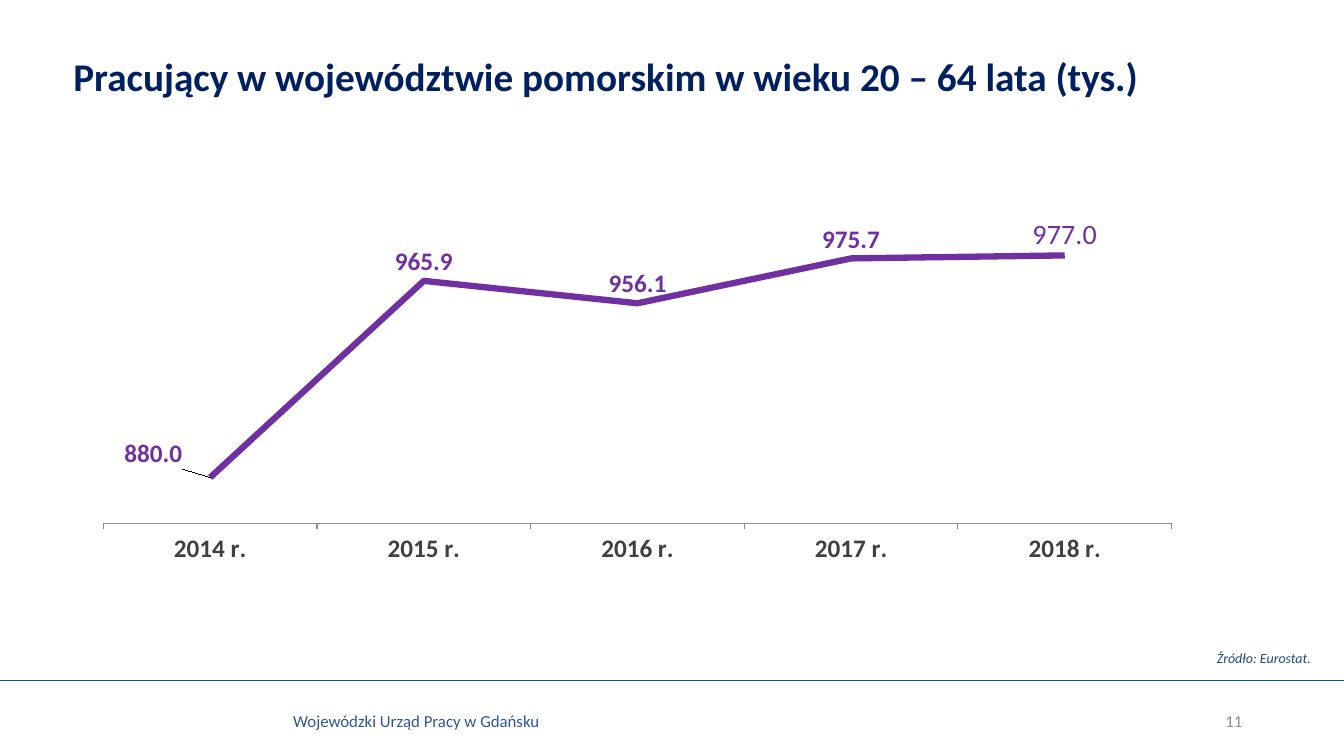
from dataclasses import dataclass

from lxml.etree import SubElement
from pptx import Presentation
from pptx.chart.data import CategoryChartData
from pptx.dml.color import RGBColor
from pptx.enum.chart import XL_CHART_TYPE, XL_LABEL_POSITION, XL_LEGEND_POSITION, XL_MARKER_STYLE, XL_TICK_MARK
from pptx.enum.shapes import MSO_CONNECTOR
from pptx.enum.text import MSO_ANCHOR, PP_ALIGN
from pptx.oxml import parse_xml
from pptx.oxml.ns import nsdecls, qn
from pptx.util import Inches, Pt


@dataclass(frozen=True)
class Theme:
    font: str = "Calibri"
    title: str = "002060"
    series: str = "7030A0"
    axis_text: str = "404040"
    axis_line: str = "8C8C8C"
    rule: str = "065B8A"
    footer: str = "2F5597"
    number: str = "8C8C8C"
    source: str = "1E4B7D"
    title_size: int = 28
    last_label_size: int = 20
    chart_size: int = 18
    footer_size: int = 12
    source_size: int = 10


THEME = Theme()
YEARS = ["2014 r.", "2015 r.", "2016 r.", "2017 r.", "2018 r."]
EMPLOYED = [880.0, 965.9, 956.1, 975.7, 977.0]
NUMBER_FORMAT = "#,##0.0"


def style_font(font, size, color, bold=False, italic=False):
    font.name = THEME.font
    font.size = Pt(size)
    font.bold = bold
    font.italic = italic
    font.color.rgb = RGBColor.from_string(color)


def add_text(s, box, text, size, color, bold=False, italic=False,
             align=PP_ALIGN.LEFT, anchor=MSO_ANCHOR.TOP):
    tf = s.shapes.add_textbox(*map(Inches, box)).text_frame
    tf.word_wrap = True
    tf.vertical_anchor = anchor
    p = tf.paragraphs[0]
    p.alignment = align
    r = p.add_run()
    r.text = text
    style_font(r.font, size, color, bold, italic)


def add_rule(s, y):
    line = s.shapes.add_connector(
        MSO_CONNECTOR.STRAIGHT, Inches(0), Inches(y), Inches(13.33), Inches(y))
    line.line.color.rgb = RGBColor.from_string(THEME.rule)
    line.line.width = Pt(1)
    SubElement(line._element.spPr, qn("a:effectLst"))


def set_layout(parent, index, **settings):
    """Give a chart element a manual layout, as fractions of the chart."""
    for old in parent.findall(qn("c:layout")):
        parent.remove(old)
    items = "".join(f'<c:{key} val="{value}"/>' for key, value in settings.items())
    parent.insert(index, parse_xml(
        f'<c:layout {nsdecls("c")}><c:manualLayout>{items}</c:manualLayout></c:layout>'))


def style_axes(chart):
    axis = chart.category_axis
    axis.major_tick_mark = XL_TICK_MARK.OUTSIDE
    axis.format.line.color.rgb = RGBColor.from_string(THEME.axis_line)
    axis.format.line.width = Pt(0.75)
    style_font(axis.tick_labels.font, THEME.chart_size, THEME.axis_text, bold=True)

    values = chart.value_axis
    values.minimum_scale = 860
    values.maximum_scale = 1000
    values.has_major_gridlines = False
    values.visible = False


def style_labels(series):
    labels = series.data_labels
    labels.show_value = True
    labels.number_format = NUMBER_FORMAT
    labels.number_format_is_linked = False
    labels.position = XL_LABEL_POSITION.ABOVE
    style_font(labels.font, THEME.chart_size, THEME.series, bold=True)

    first = series.points[0].data_label
    first.position = XL_LABEL_POSITION.ABOVE
    style_font(first.font, THEME.chart_size, THEME.series, bold=True)
    set_layout(labels._element.find(qn("c:dLbl")), 1, x=-0.05, y=-0.01)

    last = series.points[len(EMPLOYED) - 1].data_label
    r = last.text_frame.paragraphs[0].add_run()
    r.text = f"{EMPLOYED[-1]:.1f}"
    style_font(r.font, THEME.last_label_size, THEME.series)
    last.position = XL_LABEL_POSITION.ABOVE


def add_employment_chart(s, box):
    data = CategoryChartData(number_format=NUMBER_FORMAT)
    data.categories = YEARS
    data.add_series("Pracujący", EMPLOYED)
    chart = s.shapes.add_chart(XL_CHART_TYPE.LINE, *map(Inches, box), data).chart
    chart.has_title = False
    chart.has_legend = False
    style_font(chart.font, THEME.source_size, "000000", bold=True)
    set_layout(chart._chartSpace.chart.plotArea, 0, layoutTarget="inner",
               xMode="edge", yMode="edge", x=0.028, y=0.158, w=0.941, h=0.726)
    style_axes(chart)

    chart.plots[0].vary_by_categories = False
    series = chart.plots[0].series[0]
    series.smooth = False
    series.marker.style = XL_MARKER_STYLE.NONE
    series.format.line.color.rgb = RGBColor.from_string(THEME.series)
    series.format.line.width = Pt(4.5)
    style_labels(series)


def main():
    prs = Presentation()
    prs.slide_width = Inches(13.33)
    prs.slide_height = Inches(7.5)
    s = prs.slides.add_slide(prs.slide_layouts[6])

    add_rule(s, 6.75)
    add_text(s, (2.81, 7, 3.56, 0.3), "Wojewódzki Urząd Pracy w Gdańsku",
             THEME.footer_size, THEME.footer)
    add_text(s, (9.42, 6.95, 3, 0.4), "11", THEME.footer_size, THEME.number,
             align=PP_ALIGN.RIGHT, anchor=MSO_ANCHOR.MIDDLE)
    add_employment_chart(s, (0.71, 1.32, 11.26, 4.38))
    add_text(s, (0.63, 0.47, 10.81, 0.57),
             "Pracujący w województwie pomorskim w wieku 20 – 64 lata (tys.)",
             THEME.title_size, THEME.title, bold=True)
    add_text(s, (11.97, 6.39, 1.36, 0.27), "Źródło: Eurostat.",
             THEME.source_size, THEME.source, italic=True)
    prs.save("out.pptx")


if __name__ == "__main__":
    main()
